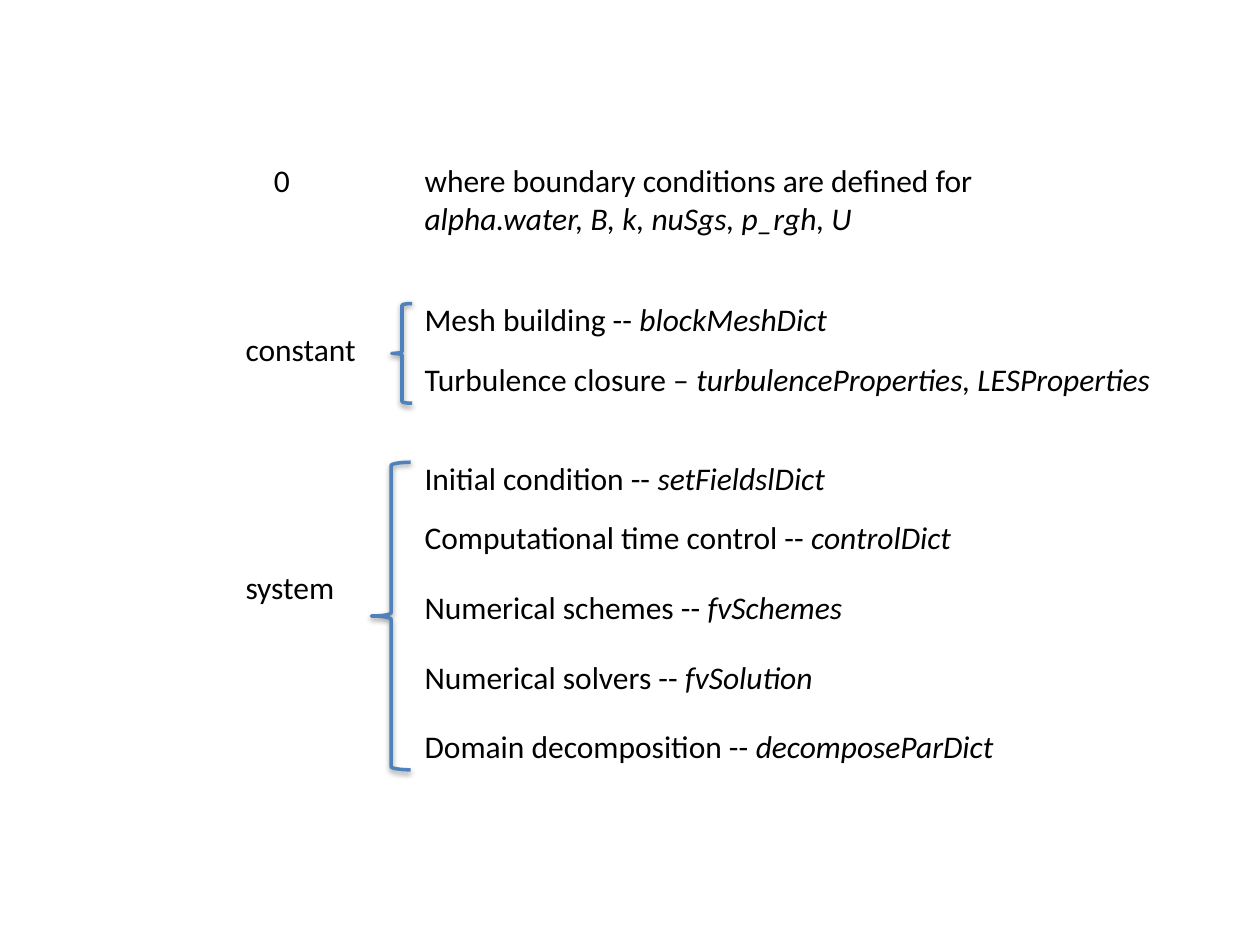
from dataclasses import dataclass

from lxml.etree import SubElement
from pptx import Presentation
from pptx.dml.color import RGBColor
from pptx.enum.shapes import MSO_SHAPE
from pptx.oxml.ns import qn
from pptx.util import Cm, Pt


@dataclass(frozen=True)
class Theme:
    font: str = "Calibri"
    text_size: Pt = Pt(18)
    text_color: RGBColor = RGBColor(0, 0, 0)
    brace_color: RGBColor = RGBColor(0x4F, 0x81, 0xBD)
    brace_width: Pt = Pt(2)
    shadow_color: str = "000000"


THEME = Theme()
LABEL_LEFT, DETAIL_LEFT = 4.7, 8.31
LINE_HEIGHT = 1.02
ZERO_INDENT = 0.57

# Folder name, top, width
LABELS = [("constant", 6.53, 2.85), ("system", 11.33, 2.42)]

# Purpose, dictionary file, top, width
DETAILS = [
    ("Mesh building -- ", "blockMeshDict", 5.92, 8.8),
    ("Turbulence closure – ", "turbulenceProperties, LESProperties", 7.14, 15.6),
    ("Initial condition -- ", "setFieldslDict", 9.12, 8.8),
    ("Computational time control -- ", "controlDict", 10.31, 11.4),
    ("Numerical schemes -- ", "fvSchemes", 11.73, 9.1),
    ("Numerical solvers -- ", "fvSolution", 13.14, 8.5),
    ("Domain decomposition -- ", "decomposeParDict", 14.53, 12.3),
]

# Left, top, width, height
BRACES = [(7.9, 6.12, 0.41, 2.01), (7.49, 9.32, 0.79, 6.2)]


def set_attributes(target, values):
    for name, value in values.items():
        setattr(target, name, value)


def add_text(slide, left, top, width, height, paragraphs):
    """Each paragraph is a list of (text, italic) runs."""
    shape = slide.shapes.add_textbox(Cm(left), Cm(top), Cm(width), Cm(height))
    frame = shape.text_frame
    frame.word_wrap = True
    for index, runs in enumerate(paragraphs):
        paragraph = frame.add_paragraph() if index else frame.paragraphs[0]
        for text, italic in runs:
            run = paragraph.add_run()
            run.text = text
            set_attributes(run.font, {"name": THEME.font, "size": THEME.text_size,
                                      "italic": italic})
            run.font.color.rgb = THEME.text_color
    return frame


def indent(paragraph, margin, first_line=0):
    properties = paragraph._p.get_or_add_pPr()
    properties.set("marL", str(Cm(margin)))
    properties.set("indent", str(Cm(first_line)))


def add_shadow(shape):
    shape.shadow.inherit = False
    effects = shape._element.spPr.find(qn("a:effectLst"))
    shadow = SubElement(effects, qn("a:outerShdw"), blurRad="40000", dist="20000",
                        dir="5400000", rotWithShape="0")
    color = SubElement(shadow, qn("a:srgbClr"), val=THEME.shadow_color)
    SubElement(color, qn("a:alpha"), val="38000")


def add_brace(slide, left, top, width, height):
    shape = slide.shapes.add_shape(MSO_SHAPE.LEFT_BRACE, Cm(left), Cm(top),
                                   Cm(width), Cm(height))
    shape.fill.background()
    shape.line.color.rgb = THEME.brace_color
    shape.line.width = THEME.brace_width
    add_shadow(shape)


def add_zero_folder(slide):
    frame = add_text(slide, LABEL_LEFT, 3.12, 15.5, 1.8, [
        [("0\twhere boundary conditions are defined for", False)],
        [("alpha.water, B, k, nuSgs, p_rgh, U", True)],
    ])
    margin = DETAIL_LEFT - LABEL_LEFT
    first, second = frame.paragraphs
    indent(first, margin, ZERO_INDENT - margin)
    indent(second, margin)


def main():
    presentation = Presentation()
    set_attributes(presentation, {"slide_width": Cm(25.4), "slide_height": Cm(19.05)})
    slide = presentation.slides.add_slide(presentation.slide_layouts[6])

    # Folder 0 with its fields
    add_zero_folder(slide)

    # Names of the other folders
    for name, top, width in LABELS:
        add_text(slide, LABEL_LEFT, top, width, LINE_HEIGHT, [[(name, False)]])

    # Purpose and file of each dictionary
    for purpose, file_name, top, width in DETAILS:
        add_text(slide, DETAIL_LEFT, top, width, LINE_HEIGHT,
                 [[(purpose, False), (file_name, True)]])

    # Braces that join folders to dictionaries
    for brace in BRACES:
        add_brace(slide, *brace)

    presentation.save("out.pptx")


if __name__ == "__main__":
    main()
